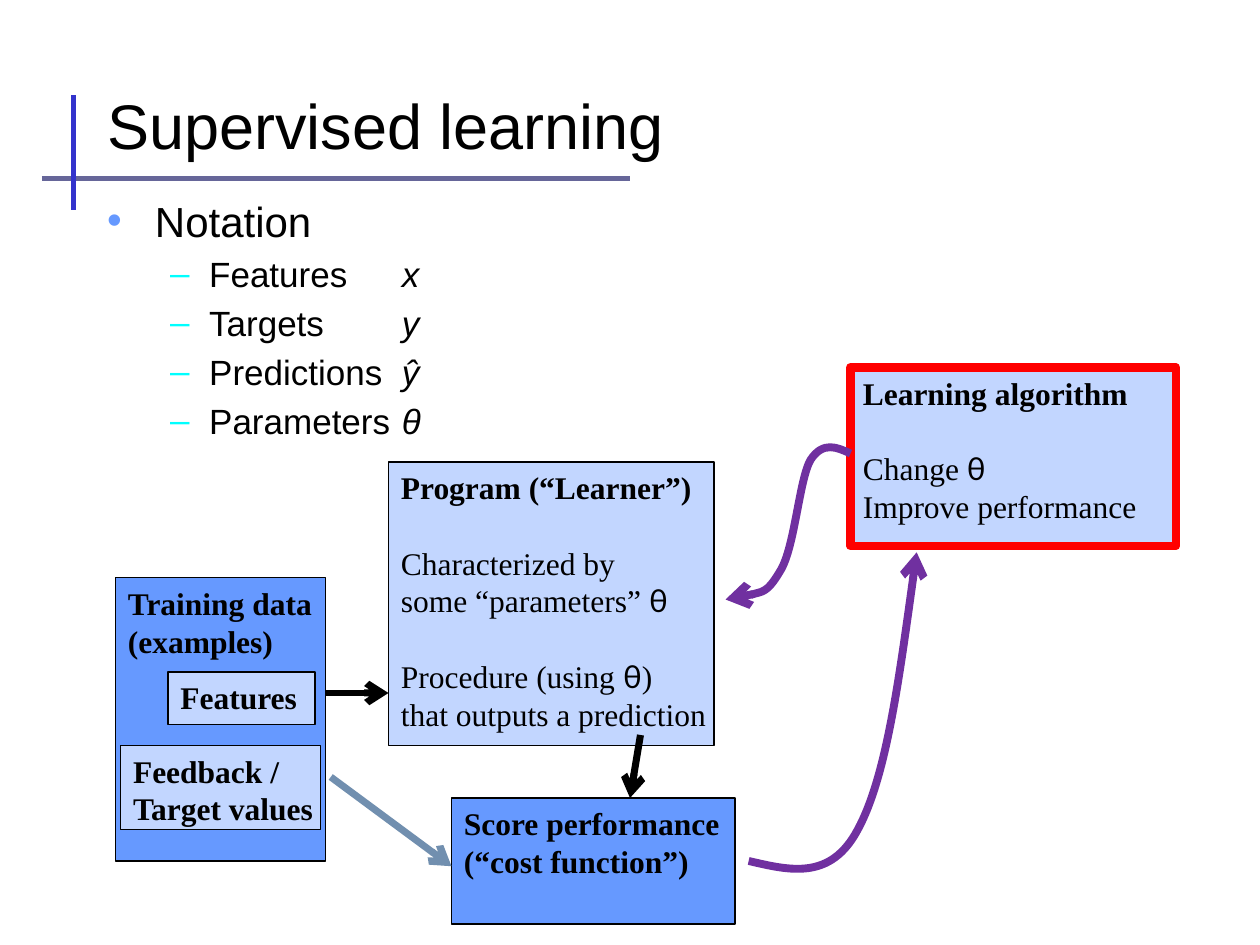
from lxml.etree import SubElement
from pptx import Presentation
from pptx.dml.color import RGBColor
from pptx.enum.shapes import MSO_CONNECTOR, MSO_SHAPE
from pptx.enum.text import MSO_ANCHOR, MSO_AUTO_SIZE, PP_ALIGN
from pptx.oxml.ns import qn
from pptx.util import Inches, Pt

PALE, BLUE, BLACK, PURPLE = "C2D6FF", "6699FF", "000000", "7030A0"
BLANK_LINE = Pt(21.5)


def cells(*counts):
    """Convert counts of grid cells, twelve to the inch, to lengths."""
    return [Inches(count / 12) for count in counts]


def color(hex_string):
    """Turn a hex string into a colour."""
    return RGBColor.from_string(hex_string)


def add_run(paragraph, text, size, font, bold=False, italic=False):
    """Add one formatted black run to a paragraph."""
    run = paragraph.add_run()
    run.text = text
    run.font.size, run.font.name = Pt(size), font
    run.font.bold, run.font.italic = bold, italic
    run.font.color.rgb = color(BLACK)


def place(shape, *box):
    """Move a placeholder to a box given in grid cells."""
    shape.left, shape.top, shape.width, shape.height = cells(*box)
    shape.text_frame.auto_size = MSO_AUTO_SIZE.NONE
    shape.text_frame.word_wrap = True


def set_stroke(shape, hex_string, width, arrow=False):
    """Colour a line and give it an open arrowhead at its end if asked."""
    shape.line.color.rgb = color(hex_string)
    shape.line.width = Pt(width)
    if arrow:
        outline = shape.element.xpath(".//a:ln")[0]
        SubElement(outline, qn("a:tailEnd"), type="arrow")


def add_title(slide, text):
    """Fill the title placeholder."""
    title = slide.shapes.title
    place(title, 9, 3, 102, 13)
    title.text_frame.vertical_anchor = MSO_ANCHOR.BOTTOM
    paragraph = title.text_frame.paragraphs[0]
    paragraph.alignment = PP_ALIGN.LEFT
    add_run(paragraph, text, 36, "Arial")


def format_bullet(paragraph, level, margin, hanging, hex_string):
    """Set the level, hanging indent and bullet colour of a list item."""
    paragraph.level = level
    properties = paragraph._p.get_or_add_pPr()
    properties.set("marL", str(Inches(margin)))
    properties.set("indent", str(-Inches(hanging)))
    bullet_color = SubElement(properties, qn("a:buClr"))
    SubElement(bullet_color, qn("a:srgbClr"), val=hex_string)
    return properties


def add_notation(slide, heading, entries):
    """Fill the body placeholder with a heading and terms tabbed to symbols."""
    body = slide.placeholders[1]
    place(body, 9, 18, 102, 63)
    frame = body.text_frame
    format_bullet(frame.paragraphs[0], 0, 0.38, 0.38, BLUE)
    add_run(frame.paragraphs[0], heading, 24, "Arial")
    for term, symbol in entries:
        item = frame.add_paragraph()
        properties = format_bullet(item, 1, 0.81, 0.31, "00FFFF")
        tabs = SubElement(properties, qn("a:tabLst"))
        SubElement(tabs, qn("a:tab"), pos=str(Inches(2.34)), algn="l")
        add_run(item, term + "\t", 20, "Arial")
        add_run(item, symbol, 20, "Arial", italic=True)


def add_box(slide, box, fill, heading, groups=(), border=BLACK, width=0.75):
    """Add a box with bold heading lines and groups of plain lines below."""
    shape = slide.shapes.add_shape(MSO_SHAPE.RECTANGLE, *cells(*box))
    shape.shadow.inherit = False
    shape.fill.solid()
    shape.fill.fore_color.rgb = color(fill)
    set_stroke(shape, border, width)
    frame = shape.text_frame
    frame.word_wrap, frame.margin_right = True, 0
    frame.vertical_anchor = MSO_ANCHOR.TOP
    paragraph = frame.paragraphs[0]
    for block, lines in enumerate([heading, *groups]):
        for row, line in enumerate(lines):
            if block or row:
                paragraph = frame.add_paragraph()
            paragraph.alignment = PP_ALIGN.LEFT
            if block and not row:
                paragraph.space_before = BLANK_LINE
            for part in filter(None, line.partition("θ")):
                font = "Lato" if part == "θ" else "Times New Roman"
                add_run(paragraph, part, 18, font, bold=not block)


def add_line(slide, start, end, hex_string, width, arrow=False):
    """Add a straight line between two grid points."""
    line = slide.shapes.add_connector(
        MSO_CONNECTOR.STRAIGHT, *cells(*start, *end))
    set_stroke(line, hex_string, width, arrow)
    SubElement(line.element.spPr, qn("a:effectLst"))


def add_curve(slide, points):
    """Add an arrow along Bézier segments: a start, then triples of points."""
    start, *rest = [cells(*point) for point in points]
    builder = slide.shapes.build_freeform(*start)
    builder.add_line_segments(rest, close=False)
    curve = builder.convert_to_shape()
    segments = curve.element.xpath(".//a:lnTo")
    for first in range(0, len(segments), 3):
        triple = segments[first:first + 3]
        bezier = SubElement(triple[0].getparent(), qn("a:cubicBezTo"))
        for segment in triple:
            bezier.append(segment[0])
            segment.getparent().remove(segment)
    curve.shadow.inherit = False
    curve.fill.background()
    set_stroke(curve, PURPLE, 4.5, arrow=True)


def main():
    """Build the supervised learning slide."""
    deck = Presentation()
    deck.slide_width, deck.slide_height = cells(120, 90)
    slide = deck.slides.add_slide(deck.slide_layouts[1])

    add_line(slide, (4, 17), (60, 17), "666699", 3)
    add_line(slide, (7, 20), (7, 9), "3333CC", 3)
    add_title(slide, "Supervised learning")
    add_notation(slide, "Notation", [
        ("Features", "x"), ("Targets", "y"),
        ("Predictions", "ŷ"), ("Parameters", "θ")])

    add_box(slide, (37, 44, 31, 27), PALE, ["Program (“Learner”)"], [
        ["Characterized by", "some “parameters” θ"],
        ["Procedure (using θ)", "that outputs a prediction"]])
    add_box(slide, (11, 55, 20, 27), BLUE, ["Training data", "(examples)"])
    add_box(slide, (16, 64, 14, 5), PALE, ["Features"])
    add_box(slide, (81, 35, 31, 17), PALE, ["Learning algorithm"],
            [["Change θ", "Improve performance"]], "FF0000", 5)
    add_box(slide, (11.5, 71, 19, 8), PALE, ["Feedback /", "Target values"])
    add_box(slide, (43, 76, 27, 12), BLUE,
            ["Score performance", "(“cost function”)"])

    add_line(slide, (31, 66), (37, 66), BLACK, 4, arrow=True)
    add_line(slide, (31.5, 74), (43, 82.5), "718FAF", 4, arrow=True)
    add_line(slide, (61, 70), (60, 76), BLACK, 4, arrow=True)
    add_curve(slide, [
        (71.3, 82), (75.2, 82.9), (79.1, 83.9), (81.7, 79),
        (84.4, 74), (85.8, 63.4), (87.3, 52.6)])
    add_curve(slide, [
        (81, 43.2), (79.7, 42.6), (78.4, 42), (77.2, 43.8),
        (76.1, 45.7), (75.7, 52.2), (74.3, 54.4),
        (73, 56.6), (71, 56.9), (69.1, 57.1)])
    deck.save("out.pptx")


if __name__ == "__main__":
    main()
